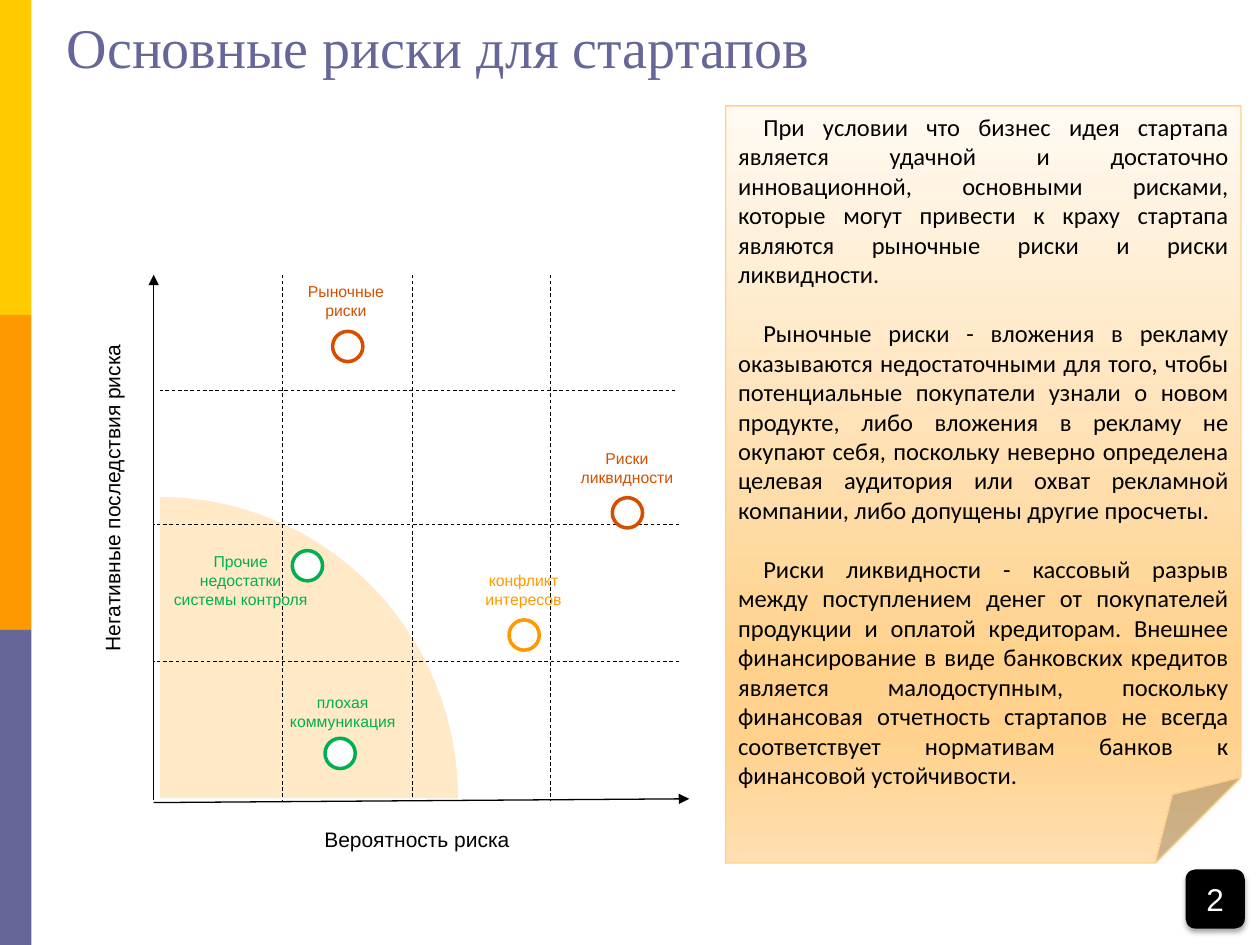
from lxml import etree
from pptx import Presentation
from pptx.dml.color import RGBColor
from pptx.enum import dml, shapes, text
from pptx.oxml import ns
from pptx.util import Inches, Pt

YELLOW = RGBColor(0xFF, 0xCC, 0x00)
ORANGE = RGBColor(0xFF, 0x99, 0x00)
VIOLET = RGBColor(0x66, 0x66, 0x99)
RED = RGBColor(0xD4, 0x50, 0x00)
GREEN = RGBColor(0x00, 0xB0, 0x50)
CREAM = RGBColor(0xFF, 0xE9, 0xC7)
PEACH = RGBColor(0xFF, 0xD1, 0x8C)
BLACK = RGBColor(0, 0, 0)
WHITE = RGBColor(0xFF, 0xFF, 0xFF)
NOTE_STOPS = [(0, RGBColor(0xFF, 0xFA, 0xF2)), (74, PEACH), (83, PEACH),
              (100, RGBColor(0xFF, 0xE0, 0xB2))]

RISKS = [
    (["Рыночные", "риски"], (2.07, 2.19, 1.35, 0.4), (2.64, 2.63), RED),
    (["Риски", "ликвидности"], (4.3, 3.51, 1.35, 0.4), (4.86, 3.95), RED),
    (["конфликт интересов"], (3.72, 4.48, 0.87, 0.4), (4.04, 4.92), ORANGE),
    (["плохая", "коммуникация"], (2.07, 5.45, 1.3, 0.4), (2.58, 5.86), GREEN),
    (["Прочие недостатки системы контроля"], (1.26, 4.33, 1.3, 0.56), (2.32, 4.37), GREEN),
]

NOTE = [
    "При условии что бизнес идея стартапа является удачной и достаточно инновационной, "
    "основными рисками, которые могут привести к краху стартапа являются рыночные риски "
    "и риски ликвидности.",
    "Рыночные риски - вложения в рекламу оказываются недостаточными для того, чтобы "
    "потенциальные покупатели узнали о новом продукте, либо вложения в рекламу не окупают "
    "себя, поскольку неверно определена целевая аудитория или охват рекламной компании, "
    "либо допущены другие просчеты.",
    "Риски ликвидности - кассовый разрыв между поступлением денег от покупателей продукции "
    "и оплатой кредиторам. Внешнее финансирование в виде банковских кредитов является "
    "малодоступным, поскольку финансовая отчетность стартапов не всегда соответствует "
    "нормативам банков к финансовой устойчивости.",
]


def sub(parent, tag, **attrs):
    return etree.SubElement(parent, ns.qn(tag), {k: str(v) for k, v in attrs.items()})


def box(values):
    return [Inches(v) for v in values]


def write(tf, lines, size, font, color, align):
    tf.word_wrap = True
    for i, line in enumerate(lines):
        p = tf.paragraphs[0] if i == 0 else tf.add_paragraph()
        p.text = line
        p.alignment = align
        p.font.size = Pt(size)
        p.font.name = font
        p.font.color.rgb = color


def add_shape(s, kind, at, fill=None, line=None, width=0.75):
    sp = s.shapes.add_shape(kind, *box(at))
    sp.shadow.inherit = False
    if fill is not None:
        sp.fill.solid()
        sp.fill.fore_color.rgb = fill
    if line is None:
        sp.line.fill.background()
    else:
        sp.line.color.rgb = line
        sp.line.width = Pt(width)
    return sp


def add_line(s, start, end, width, dashed=False, arrow=False):
    c = s.shapes.add_connector(shapes.MSO_CONNECTOR.STRAIGHT, *box(start + end))
    c.line.color.rgb = BLACK
    c.line.width = Pt(width)
    if dashed:
        c.line.dash_style = dml.MSO_LINE.DASH
    if arrow:
        sub(c.line._get_or_add_ln(), "a:tailEnd", type="triangle")
    sub(c._element.spPr, "a:effectLst")


def add_label(s, at, lines, size, color):
    tb = s.shapes.add_textbox(*box(at))
    write(tb.text_frame, lines, size, "Arial", color, text.PP_ALIGN.CENTER)
    tb.text_frame.auto_size = text.MSO_AUTO_SIZE.SHAPE_TO_FIT_TEXT
    return tb


def add_title(s):
    title = s.shapes.title
    title.left, title.top, title.width, title.height = box((0.43, 0.09, 6.77, 0.59))
    tf = title.text_frame
    write(tf, ["Основные риски для стартапов"], 32, "Times New Roman", VIOLET,
          text.PP_ALIGN.LEFT)
    tf.auto_size = text.MSO_AUTO_SIZE.NONE
    tf.vertical_anchor = text.MSO_ANCHOR.BOTTOM


def add_risk_map(s):
    add_shape(s, shapes.MSO_SHAPE.ARC, (-1.09, 3.95, 4.72, 4.77), CREAM, CREAM)
    add_line(s, (1.22, 6.35), (1.22, 2.18), 0.75, arrow=True)
    add_line(s, (1.22, 6.37), (5.47, 6.34), 0.75, arrow=True)
    for x in (2.24, 3.27, 4.37):
        add_line(s, (x, 2.18), (x, 6.35), 0.5, dashed=True)
    for left, right, y in ((1.27, 5.36, 3.1), (1.22, 5.39, 4.16), (1.22, 5.39, 5.25)):
        add_line(s, (right, y), (left, y), 0.5, dashed=True)
    add_label(s, (1.46, 6.51, 3.7, 0.3), ["Вероятность риска"], 12, BLACK)
    axis = add_label(s, (0.74, 2.34, 0.4, 3.22), ["Негативные последствия риска"], 12, BLACK)
    axis.text_frame._txBody.bodyPr.set("vert", "vert270")
    for lines, at, spot, color in RISKS:
        add_shape(s, shapes.MSO_SHAPE.FLOWCHART_CONNECTOR, spot + (0.24, 0.24),
                  WHITE, color, 2)
        add_label(s, at, lines, 9, color)


def add_note(s):
    sp = add_shape(s, shapes.MSO_SHAPE.FOLDED_CORNER, (5.76, 0.84, 4.09, 6.01), line=PEACH)
    sp.fill.gradient()
    sp.fill.gradient_angle = 270
    stops = sp._element.spPr.find(ns.qn("a:gradFill")).find(ns.qn("a:gsLst"))
    for stop in list(stops):
        stops.remove(stop)
    for pos, color in NOTE_STOPS:
        sub(sub(stops, "a:gs", pos=pos * 1000), "a:srgbClr", val=color)
    tf = sp.text_frame
    write(tf, NOTE, 14, "Calibri", BLACK, text.PP_ALIGN.JUSTIFY)
    tf.vertical_anchor = text.MSO_ANCHOR.TOP
    for p in tf.paragraphs:
        p.space_after = Pt(17)
        p._p.get_or_add_pPr().set("indent", str(Inches(0.2)))


def add_page_number(s):
    sp = add_shape(s, shapes.MSO_SHAPE.ROUNDED_RECTANGLE, (9.41, 6.9, 0.47, 0.47), BLACK)
    effects = sp._element.spPr.find(ns.qn("a:effectLst"))
    shadow = sub(effects, "a:outerShdw", blurRad=Pt(3.1), dist=Pt(1.8), dir=5400000,
                 rotWithShape=0)
    sub(sub(shadow, "a:srgbClr", val=BLACK), "a:alpha", val=35000)
    write(sp.text_frame, ["2"], 18, "Arial", WHITE, text.PP_ALIGN.CENTER)
    sp.text_frame.vertical_anchor = text.MSO_ANCHOR.MIDDLE


def main():
    prs = Presentation()
    prs.slide_width, prs.slide_height = Inches(10), Inches(7.5)
    s = prs.slides.add_slide(prs.slide_layouts[5])
    for i, color in enumerate((YELLOW, ORANGE, VIOLET)):
        add_shape(s, shapes.MSO_SHAPE.RECTANGLE, (0, 2.5 * i, 0.25, 2.5), color)
    add_risk_map(s)
    add_title(s)
    add_note(s)
    add_page_number(s)
    prs.save("out.pptx")


if __name__ == "__main__":
    main()
